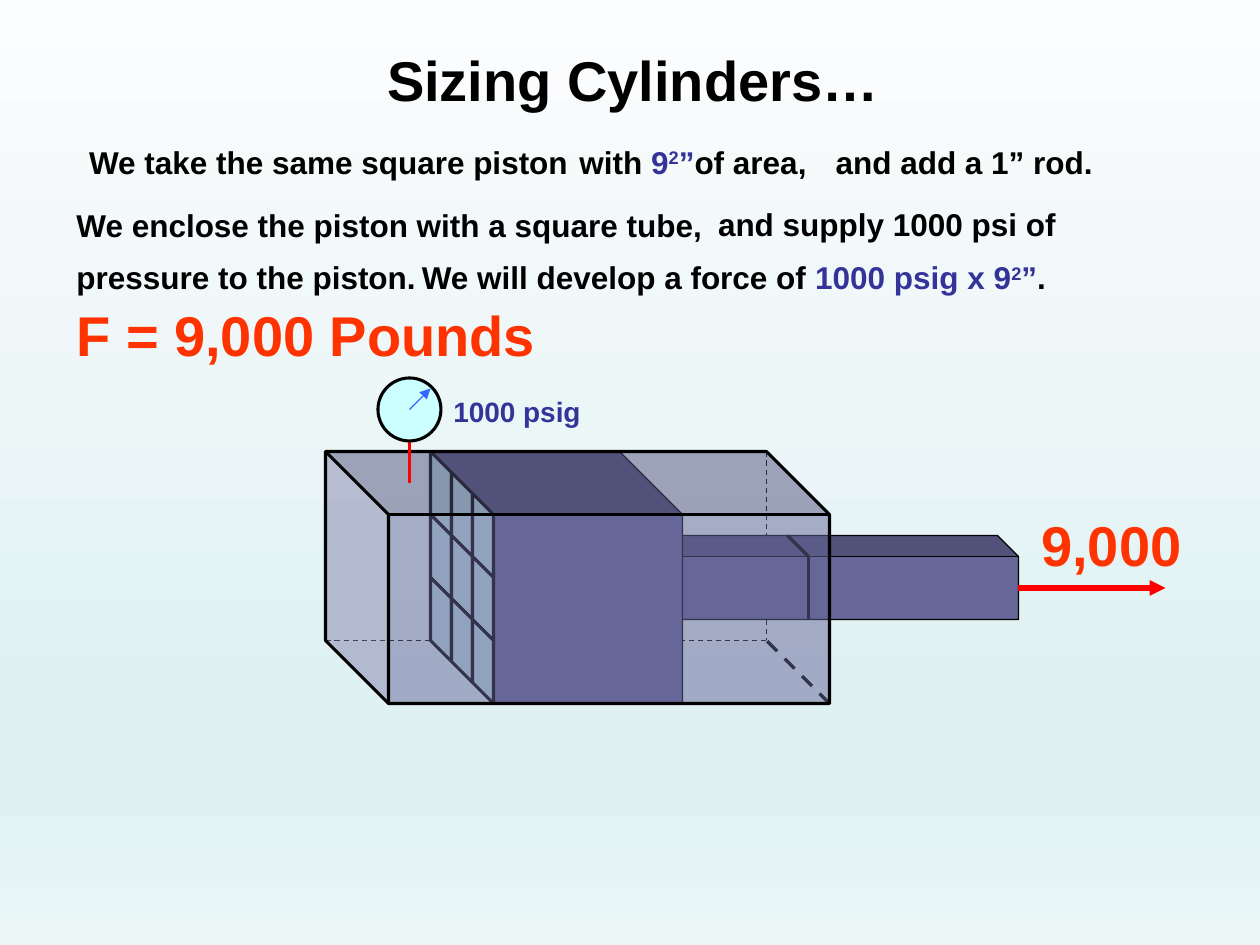
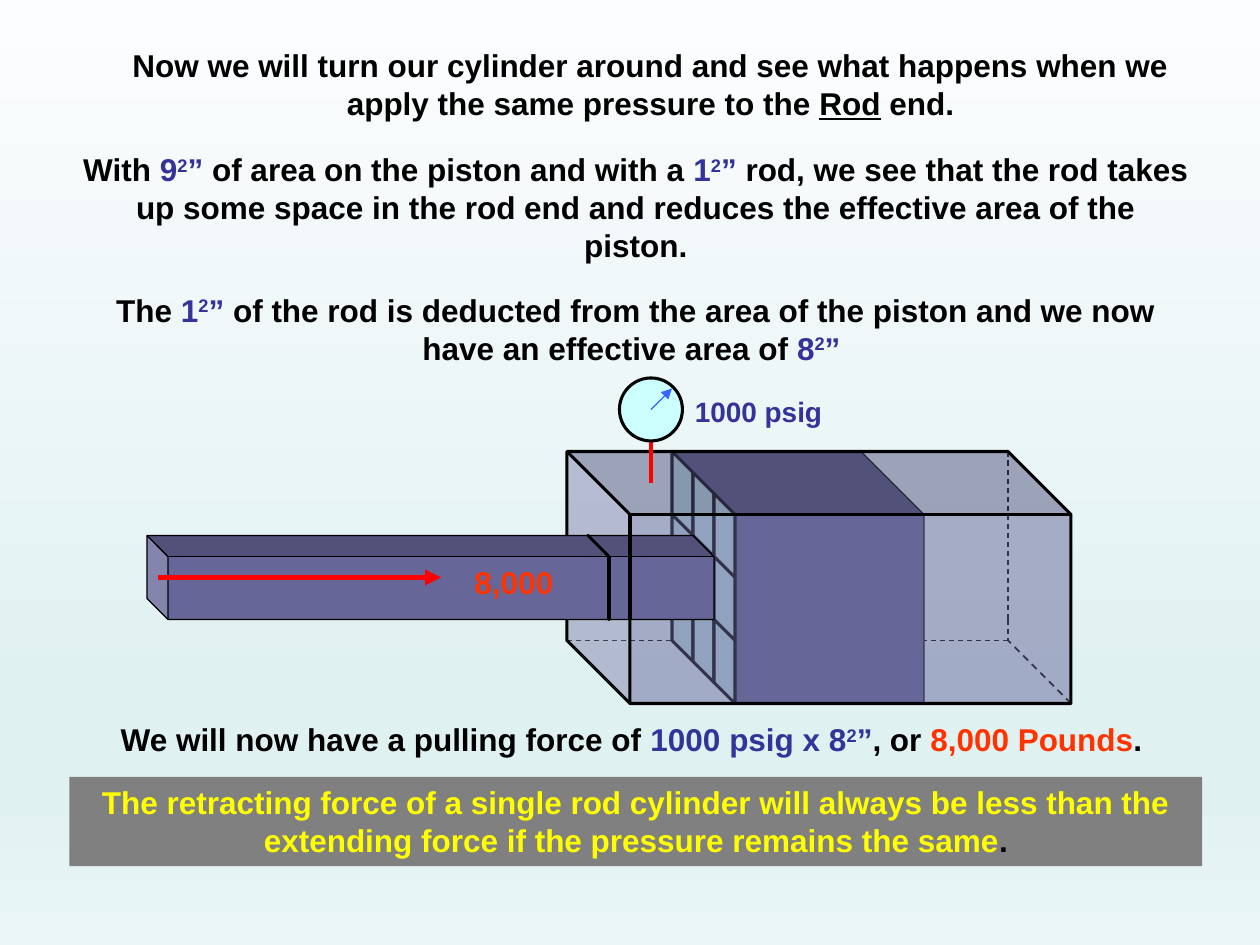
from dataclasses import dataclass
from typing import NamedTuple

from lxml.etree import SubElement
from pptx import Presentation
from pptx.dml.color import RGBColor
from pptx.enum.dml import MSO_LINE
from pptx.enum.shapes import MSO_CONNECTOR, MSO_SHAPE
from pptx.enum.text import MSO_ANCHOR, MSO_AUTO_SIZE, PP_ALIGN
from pptx.oxml.ns import qn
from pptx.util import Emu, Inches, Pt

COLUMNS, ROWS = 120, 90
CELL = Inches(10) // COLUMNS
FONT = "Arial"
COLORS = {
    "ink": "000000", "navy": "333399", "force": "FF3300", "arrow": "FF0000",
    "needle": "3366FF", "dial": "CCFFFF", "steel": "666699", "tile": "BBE0E3",
    "grey": "808080", "yellow": "FFFF00",
}
BACKGROUND_STOPS = {0: "FCFDFE", 74: "E0F1F2", 83: "E0F1F2", 100: "EBF6F7"}
TURNED_LEFT, TURNED_RIGHT = 270, 90


class Area(NamedTuple):
    """A box as it shows, in grid columns and rows."""
    left: float
    top: float
    width: float
    height: float


class Span(NamedTuple):
    text: str
    color: str = "ink"
    raised: bool = False
    underlined: bool = False


@dataclass(frozen=True)
class Caption:
    area: Area
    spans: list[Span]
    size: int = 18
    centered: bool = False
    wraps: bool = True


@dataclass(frozen=True)
class Solid:
    kind: MSO_SHAPE
    area: Area
    color: str
    line_width: float = 0
    rotation: int = 0
    adjustment: float | None = None
    opacity: int = 100


@dataclass(frozen=True)
class Stroke:
    start: tuple[float, float]
    end: tuple[float, float]
    width: float = 0.75
    color: str = "ink"
    dashed: bool = False
    arrow: bool = False


def cells(count: float) -> Emu:
    return Emu(round(count * CELL))


def rgb(name: str) -> RGBColor:
    return RGBColor.from_string(COLORS[name])


def squared(text: str) -> list[Span]:
    """An area in square inches, written as on the slides: 9²”."""
    return [Span(text, "navy"), Span("2", "navy", raised=True), Span("”", "navy")]


def set_background(master) -> None:
    fill = master.background.fill
    fill.gradient()
    fill.gradient_angle = 270
    stops = master.element.xpath("./p:cSld/p:bg//a:gsLst")[0]
    for stop in list(stops):
        stops.remove(stop)
    for percent, color in BACKGROUND_STOPS.items():
        stop = SubElement(stops, qn("a:gs"), pos=str(percent * 1000))
        SubElement(stop, qn("a:srgbClr"), val=color)


def write(box, caption: Caption) -> None:
    frame = box.text_frame
    frame.word_wrap = caption.wraps
    frame.auto_size = MSO_AUTO_SIZE.SHAPE_TO_FIT_TEXT
    frame.vertical_anchor = MSO_ANCHOR.TOP
    para = frame.paragraphs[0]
    para.alignment = PP_ALIGN.CENTER if caption.centered else PP_ALIGN.LEFT
    for part in caption.spans:
        span = para.add_run()
        span.text = part.text
        span.font.name, span.font.size, span.font.bold = FONT, Pt(caption.size), True
        span.font.color.rgb = rgb(part.color)
        if part.underlined:
            span.font.underline = True
        if part.raised:
            span._r.get_or_add_rPr().set("baseline", "30000")


def draw_caption(page, caption: Caption) -> None:
    write(page.shapes.add_textbox(*map(cells, caption.area)), caption)


def draw_solid(page, solid: Solid):
    left, top, width, height = solid.area
    if solid.rotation:
        left, top = left + (width - height) / 2, top + (height - width) / 2
        width, height = height, width
    shape = page.shapes.add_shape(solid.kind, *map(cells, (left, top, width, height)))
    shape.rotation = solid.rotation
    shape.shadow.inherit = False
    if solid.adjustment is not None:
        shape.adjustments[0] = solid.adjustment
    shape.fill.solid()
    shape.fill.fore_color.rgb = rgb(solid.color)
    if solid.opacity < 100:
        color = shape._element.spPr.find(qn("a:solidFill"))[0]
        SubElement(color, qn("a:alpha"), val=str(solid.opacity * 1000))
    if solid.line_width:
        shape.line.color.rgb = rgb("ink")
        shape.line.width = Pt(solid.line_width)
    else:
        shape.line.fill.background()
    return shape


def draw_stroke(page, stroke: Stroke, shift: int = 0) -> None:
    (x1, y1), (x2, y2) = stroke.start, stroke.end
    line = page.shapes.add_connector(
        MSO_CONNECTOR.STRAIGHT, *map(cells, (x1 + shift, y1, x2 + shift, y2)))
    line.line.color.rgb = rgb(stroke.color)
    line.line.width = Pt(stroke.width)
    if stroke.dashed:
        line.line.dash_style = MSO_LINE.DASH
    properties = line._element.spPr
    if stroke.arrow:
        SubElement(properties.find(qn("a:ln")), qn("a:tailEnd"), type="triangle")
    SubElement(properties, qn("a:effectLst"))


def draw_cube(page, area: Area, line_width: float = 0.75, opacity: int = 100) -> None:
    draw_solid(page, Solid(MSO_SHAPE.CUBE, area, "steel", line_width,
                           TURNED_LEFT, 0.25, opacity))


def draw_side_face(page, left: float, top: float, color: str, opacity: int = 100) -> None:
    """A slanted face, two columns wide, seen from the left."""
    draw_solid(page, Solid(MSO_SHAPE.PARALLELOGRAM, Area(left, top, 2, 8), color,
                           1.75, TURNED_RIGHT, 1, opacity))


def draw_piston(page, shift: int) -> None:
    """The piston, with its face split into nine square inches."""
    draw_cube(page, Area(41 + shift, 43, 24, 24))
    for row in range(3):
        for column in range(3):
            draw_side_face(page, 41 + shift + 2 * column, 43 + 2 * column + 6 * row, "tile")


def draw_hidden_edges(page, shift: int, upper_end: int, diagonal_width: float) -> None:
    corner = (73, 61)
    for stroke in (
        Stroke((73, 43), (73, upper_end), dashed=True),
        Stroke((73, 59), corner, dashed=True),
        Stroke((79, 67), corner, diagonal_width, dashed=True),
        Stroke((31, 61), (41, 61), dashed=True),
        Stroke(corner, (65, 61), dashed=True),
    ):
        draw_stroke(page, stroke, shift)


def draw_tube(page, shift: int) -> None:
    draw_cube(page, Area(31 + shift, 43, 48, 24), 1.75, opacity=50)


def draw_rod(page, left: float) -> None:
    draw_cube(page, Area(left, 51, 54, 8))


def draw_rod_opening(page, left: float, width: float) -> None:
    """The edge where the rod passes through the end of the tube."""
    draw_stroke(page, Stroke((left, 51), (left + 2, 53), width))
    draw_stroke(page, Stroke((left + 2, 53), (left + 2, 59), width))


def draw_gauge(page, shift: int) -> None:
    draw_stroke(page, Stroke((39, 46), (39, 42), 2, "arrow"), shift)
    draw_solid(page, Solid(MSO_SHAPE.OVAL, Area(36 + shift, 36, 6, 6), "dial", 1.75))
    draw_stroke(page, Stroke((39, 39), (41, 37), color="needle", arrow=True), shift)
    draw_caption(page, Caption(Area(42 + shift, 37, 14.6, 4.4),
                               [Span("1000 psig", "navy")], 16, wraps=False))


def draw_force(page, stroke_ends, label: Area, text: str, size: int) -> None:
    draw_stroke(page, Stroke(*stroke_ends, 3, "arrow", arrow=True))
    draw_caption(page, Caption(label, [Span(text, "force")], size, wraps=False))


def build_extending(page) -> None:
    for caption in (
        Caption(Area(6.1, 3.7, 108.4, 7.6), [Span("Sizing Cylinders…")], 32, centered=True),
        Caption(Area(7.3, 13, 49.6, 4.8), [Span("We take the same square piston")]),
        Caption(Area(54, 13, 30, 4.8),
                [Span("with "), *squared("9"), Span("of area,")]),
        Caption(Area(78.4, 13, 31.6, 4.8), [Span("and add a 1” rod.")]),
        Caption(Area(6.1, 19, 64, 4.8),
                [Span("We enclose the piston with a square tube,")]),
        Caption(Area(67.2, 18.9, 36.8, 4.8), [Span("and supply 1000 psi of")]),
        Caption(Area(6.1, 24, 34.9, 4.8), [Span("pressure to the piston.")]),
        Caption(Area(39, 24, 79, 4.8), [Span("We will develop a force of "),
                                        *squared("1000 psig x 9"), Span(".")]),
        Caption(Area(6.1, 28, 108.4, 7.6), [Span("F = 9,000 Pounds", "force")], 32),
    ):
        draw_caption(page, caption)
    draw_rod(page, 43)
    draw_piston(page, 0)
    draw_hidden_edges(page, 0, upper_end=51, diagonal_width=2)
    draw_rod_opening(page, 75, 2)
    draw_tube(page, 0)
    draw_gauge(page, 0)
    draw_force(page, ((97, 56), (111, 56)), Area(98, 48, 15.8, 7.7), "9,000", 32)


def build_retracting(page) -> None:
    shift = 23
    left, width = 6.6, 107.9
    draw_piston(page, shift)
    draw_hidden_edges(page, shift, upper_end=59, diagonal_width=1)
    draw_tube(page, shift)
    draw_gauge(page, shift)
    draw_side_face(page, 56, 51, "grey", opacity=50)
    draw_rod(page, 14)
    draw_stroke(page, Stroke((60, 59), (60, 49), 1.75))
    draw_rod_opening(page, 56, 1.75)
    draw_force(page, ((15, 55), (42, 55)), Area(44, 53, 10, 4.8), "8,000", 18)
    for area, spans in (
        (Area(8, 3.8, width, 8.5),
         [Span("Now we will turn our cylinder around and see what happens when we "
               "apply the same pressure to the "),
          Span("Rod", underlined=True), Span(" end.")]),
        (Area(left, 13.7, width, 12.1),
         [Span("With "), *squared("9"), Span(" of area on the piston and with a "),
          *squared("1"), Span(" rod, we see that the rod takes up some space in the "
                              "rod end and reduces the effective area of the piston.")]),
        (Area(left, 27.1, width, 8.5),
         [Span("The "), *squared("1"),
          Span(" of the rod is deducted from the area of the piston and we now have "
               "an effective area of "), *squared("8"), Span(" ", "navy")]),
        (Area(left, 68, width, 4.8),
         [Span("We will now have a pulling force of "), *squared("1000 psig x 8"),
          Span(", or "), Span("8,000 Pounds", "force"), Span(". ")]),
    ):
        draw_caption(page, Caption(area, spans, centered=True))
    banner = Area(left, 74, width, 8.5)
    write(draw_solid(page, Solid(MSO_SHAPE.RECTANGLE, banner, "grey")),
          Caption(banner, [
              Span("The retracting force of a single rod cylinder will always be less "
                   "than the extending force if the pressure remains the same", "yellow"),
              Span(".")], centered=True))


def main() -> None:
    deck = Presentation()
    deck.slide_width, deck.slide_height = cells(COLUMNS), cells(ROWS)
    set_background(deck.slide_master)
    blank = deck.slide_layouts[6]
    for build in (build_extending, build_retracting):
        build(deck.slides.add_slide(blank))
    deck.save("out.pptx")


if __name__ == "__main__":
    main()
